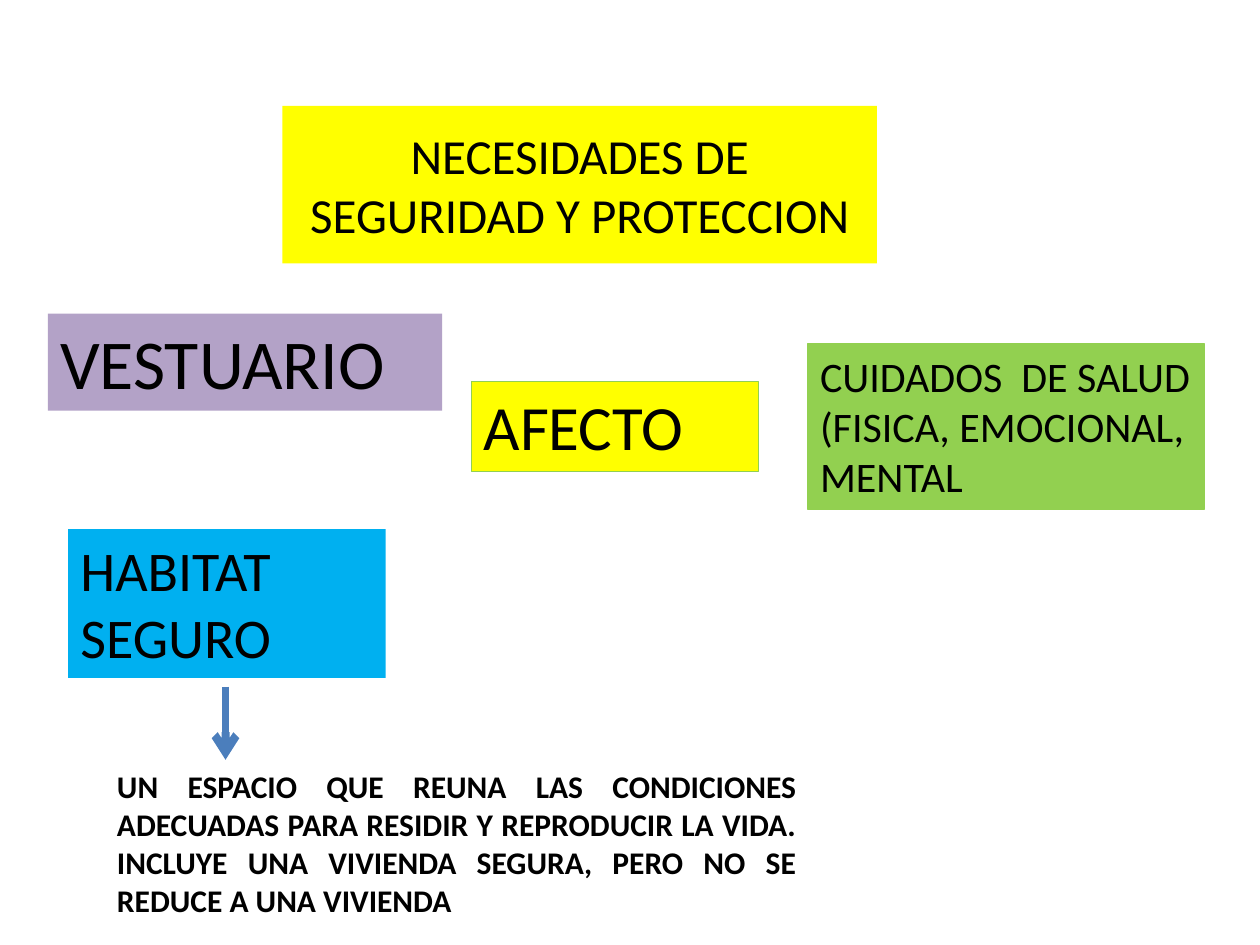
"""Build the slide on the needs for safety and protection."""
import pptx
import pptx.util
import pptx.dml.color
import pptx.enum.shapes
import pptx.enum.text
import pptx.oxml
import pptx.oxml.ns

Inches, Pt = pptx.util.Inches, pptx.util.Pt
RGBColor = pptx.dml.color.RGBColor
Align = pptx.enum.text.PP_ALIGN
Anchor = pptx.enum.text.MSO_ANCHOR

BLACK = RGBColor(0x00, 0x00, 0x00)
YELLOW = RGBColor(0xFF, 0xFF, 0x00)
PURPLE = RGBColor(0xB3, 0xA2, 0xC7)
GREEN = RGBColor(0x92, 0xD0, 0x50)
SKY = RGBColor(0x00, 0xB0, 0xF0)
BLUE = RGBColor(0x4B, 0x7E, 0xBC)

TITLE = ("NECESIDADES DE SEGURIDAD Y PROTECCION", (2.24, 0.84, 4.72, 1.25), 28, YELLOW)
NEEDS = [
    ("AFECTO", (3.74, 3.03, 2.28, 0.71), 36, YELLOW, GREEN),
    ("VESTUARIO", (0.38, 2.49, 3.13, 0.77), 40, PURPLE),
    ("CUIDADOS  DE SALUD (FISICA, EMOCIONAL, MENTAL", (6.41, 2.73, 3.15, 1.31), 24, GREEN, GREEN),
    ("HABITAT SEGURO", (0.54, 4.2, 2.52, 1.18), 32, SKY),
]
NOTE = (
    "UN ESPACIO QUE REUNA LAS CONDICIONES ADECUADAS PARA RESIDIR Y REPRODUCIR "
    "LA VIDA. INCLUYE UNA VIVIENDA SEGURA, PERO NO SE REDUCE A UNA VIVIENDA",
    (0.83, 6.04, 5.59, 1.31), 18,
)
ARROW = (1.79, 5.45, 1.79, 6.03)


def add_box(slide, text, place, size, fill=None, edge=None,
            align=Align.LEFT, anchor=Anchor.TOP, bold=False):
    """Add a text box with an optional fill and edge."""
    box = slide.shapes.add_textbox(*map(Inches, place))
    if fill is not None:
        box.fill.solid()
        box.fill.fore_color.rgb = fill
    if edge is not None:
        box.line.color.rgb = edge
        box.line.width = Pt(0.75)
    frame = box.text_frame
    frame.word_wrap = True
    frame.vertical_anchor = anchor
    para = frame.paragraphs[0]
    para.alignment = align
    run = para.add_run()
    run.text = text
    run.font.name = "Calibri"
    run.font.size = Pt(size)
    run.font.bold = bold
    run.font.color.rgb = BLACK


def add_arrow(slide, ends):
    """Add the arrow from a need to its note."""
    kind = pptx.enum.shapes.MSO_CONNECTOR.STRAIGHT
    arrow = slide.shapes.add_connector(kind, *map(Inches, ends))
    arrow.line.color.rgb = BLUE
    arrow.line.width = Pt(4.5)
    props = arrow.element.spPr
    tip = pptx.oxml.parse_xml(f'<a:tailEnd {pptx.oxml.ns.nsdecls("a")} type="arrow"/>')
    props.find(pptx.oxml.ns.qn("a:ln")).append(tip)
    props.append(pptx.oxml.parse_xml(f'<a:effectLst {pptx.oxml.ns.nsdecls("a")}/>'))


def main():
    """Build and save the slide."""
    deck = pptx.Presentation()
    deck.slide_width, deck.slide_height = Inches(10), Inches(7.5)
    slide = deck.slides.add_slide(deck.slide_layouts[6])
    add_box(slide, *TITLE, align=Align.CENTER, anchor=Anchor.MIDDLE)
    for need in NEEDS:
        add_box(slide, *need)
    add_arrow(slide, ARROW)
    add_box(slide, *NOTE, align=Align.JUSTIFY, bold=True)
    deck.save("out.pptx")


if __name__ == "__main__":
    main()
